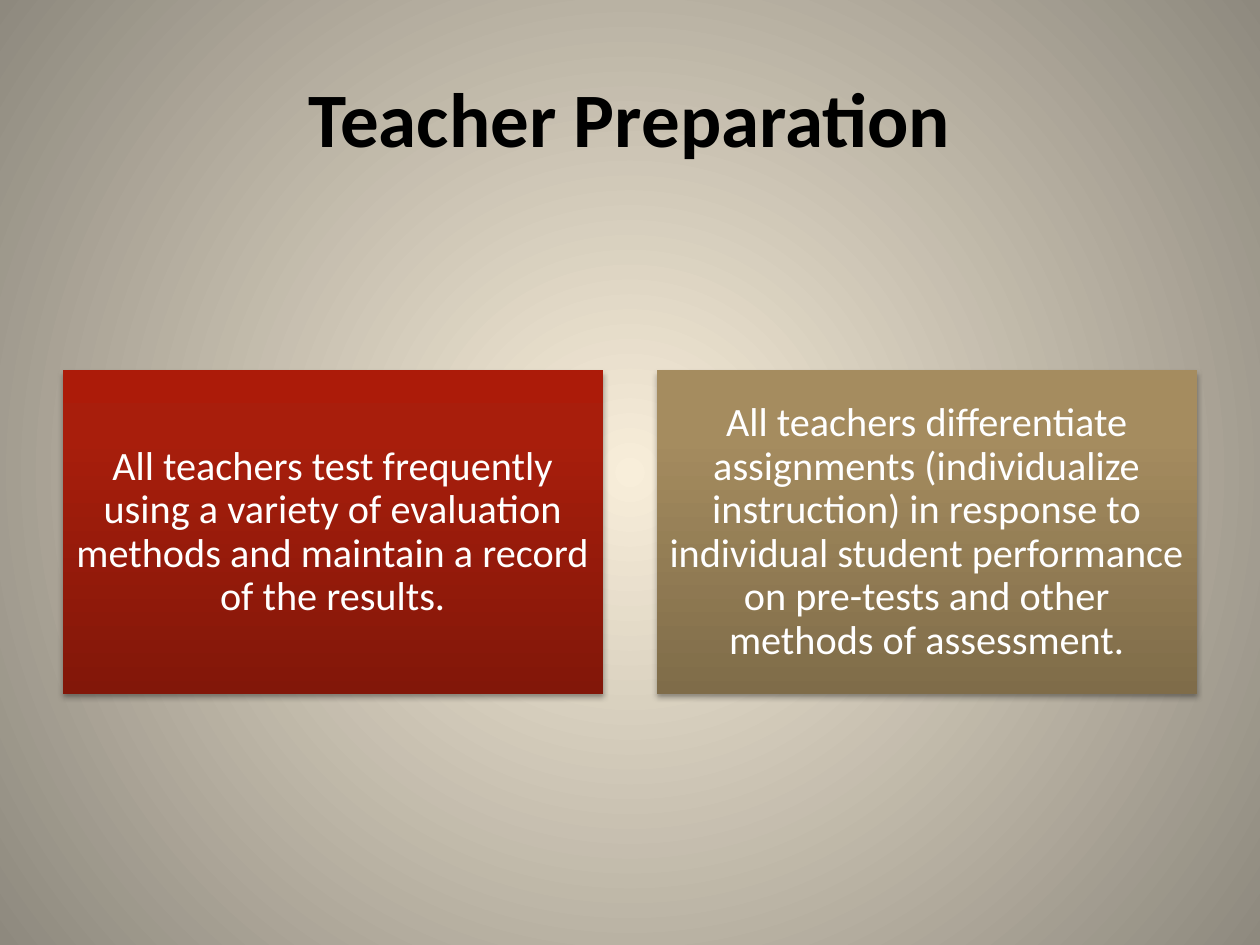
import pptx
import pptx.util
import pptx.oxml
import pptx.oxml.ns
from dataclasses import dataclass
from pptx.dml.color import RGBColor
from pptx.enum.shapes import MSO_SHAPE
from pptx.enum.text import MSO_ANCHOR, PP_ALIGN

# Content
TITLE = "Teacher Preparation"
CARDS = [
    ("All teachers test frequently using a variety of evaluation methods "
     "and maintain a record of the results.", "red"),
    ("All teachers differentiate assignments (individualize instruction) "
     "in response to individual student performance on pre-tests and other "
     "methods of assessment.", "tan"),
]


@dataclass(frozen=True)
class Theme:
    font: str = "Calibri"
    black: str = "000000"
    white: str = "FFFFFF"
    head: int = 44
    body: int = 23
    back: tuple = ((0, "F8EEDA"), (100, "8E897E"))
    red: tuple = ((0, "821709"), (80, "A81E0C"), (100, "AC1B09"))
    tan: tuple = ((0, "7F6C49"), (80, "A58C5F"), (100, "A78D5E"))


LOOK = Theme()
NS = pptx.oxml.ns.nsdecls("a")
RISE = '<a:lin ang="16200000" scaled="0"/>'
GLOW = ('<a:path path="circle"><a:fillToRect l="50000" t="50000" '
        'r="50000" b="50000"/></a:path>')
SHADE = (f'<a:outerShdw {NS} blurRad="39400" dist="22900" dir="5400000" '
         f'rotWithShape="0"><a:srgbClr val="{LOOK.black}">'
         '<a:alpha val="35000"/></a:srgbClr></a:outerShdw>')

# Grid, in inches
WIDE, HIGH = 10, 7.5
EDGE, GAP = 0.5, 0.43
CARD_W = (WIDE - 2 * EDGE - GAP * (len(CARDS) - 1)) / len(CARDS)
CARD_H = CARD_W * 0.6
CARD_TOP = 2.94


def blend(fill, root, stops, way):
    """Give a fill the colour stops and the direction of a gradient."""
    fill.gradient()
    old = next(root.iter(pptx.oxml.ns.qn("a:gradFill")))
    marks = "".join(f'<a:gs pos="{at * 1000}"><a:srgbClr val="{tone}"/></a:gs>'
                    for at, tone in stops)
    new = pptx.oxml.parse_xml(f'<a:gradFill {NS} rotWithShape="1">'
                              f'<a:gsLst>{marks}</a:gsLst>{way}</a:gradFill>')
    old.getparent().replace(old, new)


def place(shape, *box):
    shape.left, shape.top, shape.width, shape.height = map(pptx.util.Inches, box)


def write(shape, text, size, tone, bold=False):
    frame = shape.text_frame
    frame.text = text
    frame.word_wrap = True
    frame.vertical_anchor = MSO_ANCHOR.MIDDLE
    line = frame.paragraphs[0]
    line.alignment = PP_ALIGN.CENTER
    font = line.runs[0].font
    font.name, font.size, font.bold = LOOK.font, pptx.util.Pt(size), bold
    font.color.rgb = RGBColor.from_string(tone)
    return frame


def add_card(slide, col, text, tone):
    left = EDGE + col * (CARD_W + GAP)
    card = slide.shapes.add_shape(MSO_SHAPE.RECTANGLE, 0, 0, 0, 0)
    place(card, left, CARD_TOP, CARD_W, CARD_H)
    blend(card.fill, card._element.spPr, getattr(LOOK, tone), RISE)
    card.line.fill.background()
    card.shadow.inherit = False
    glow = card._element.spPr.find(pptx.oxml.ns.qn("a:effectLst"))
    glow.append(pptx.oxml.parse_xml(SHADE))
    frame = write(card, text, LOOK.body, LOOK.white)
    frame.margin_left = frame.margin_right = pptx.util.Inches(0.1)
    frame.margin_top = frame.margin_bottom = pptx.util.Inches(0.1)
    frame.paragraphs[0].line_spacing = 0.9


def main():
    deck = pptx.Presentation()
    deck.slide_width = pptx.util.Inches(WIDE)
    deck.slide_height = pptx.util.Inches(HIGH)
    slide = deck.slides.add_slide(deck.slide_layouts[5])

    # Background
    blend(slide.background.fill, slide._element, LOOK.back, GLOW)

    # Title
    title = slide.shapes.title
    place(title, EDGE, HIGH * 0.04, WIDE - 2 * EDGE, 1.25)
    write(title, TITLE, LOOK.head, LOOK.black, bold=True)

    # Cards
    for col, (text, tone) in enumerate(CARDS):
        add_card(slide, col, text, tone)

    deck.save("out.pptx")


if __name__ == "__main__":
    main()
